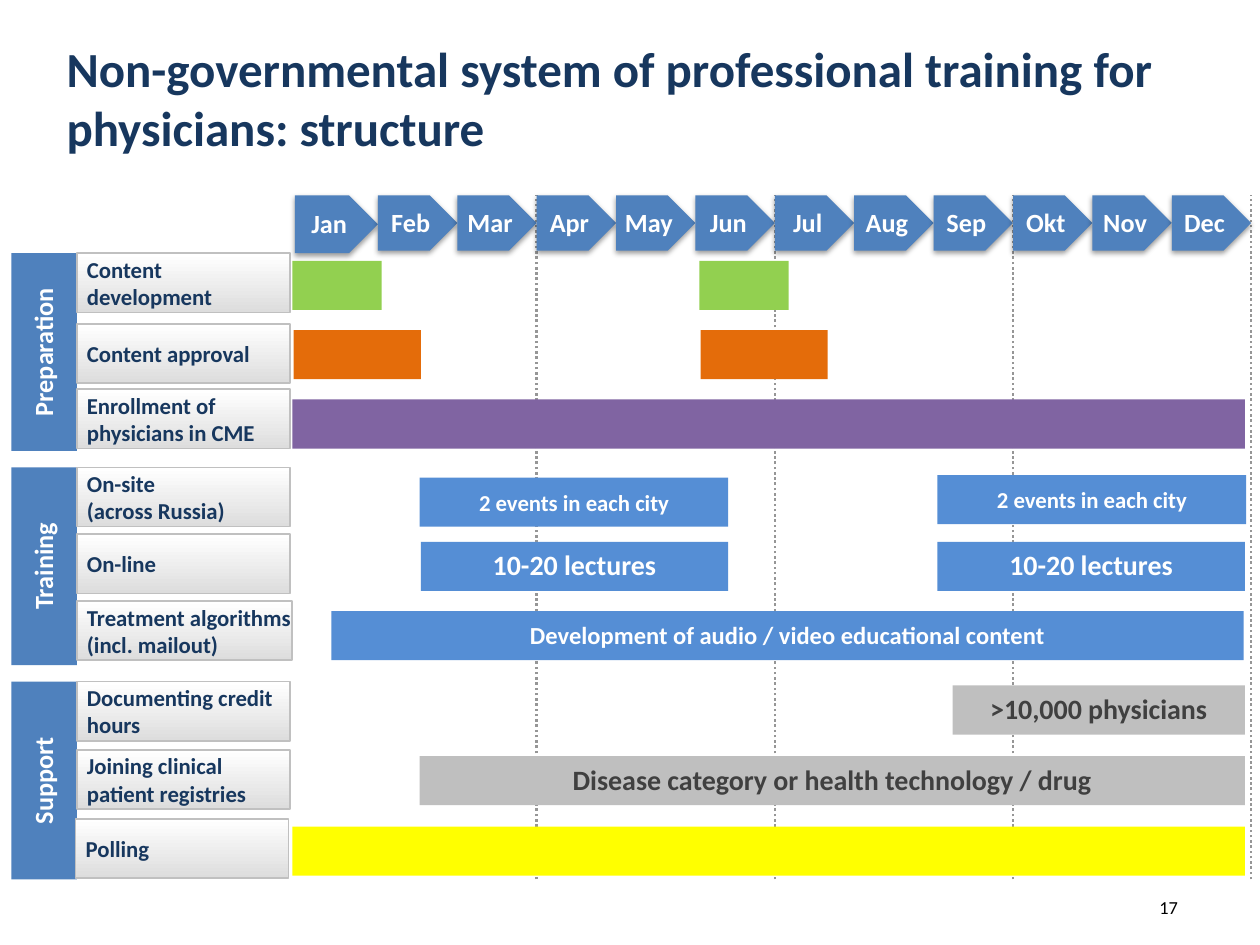
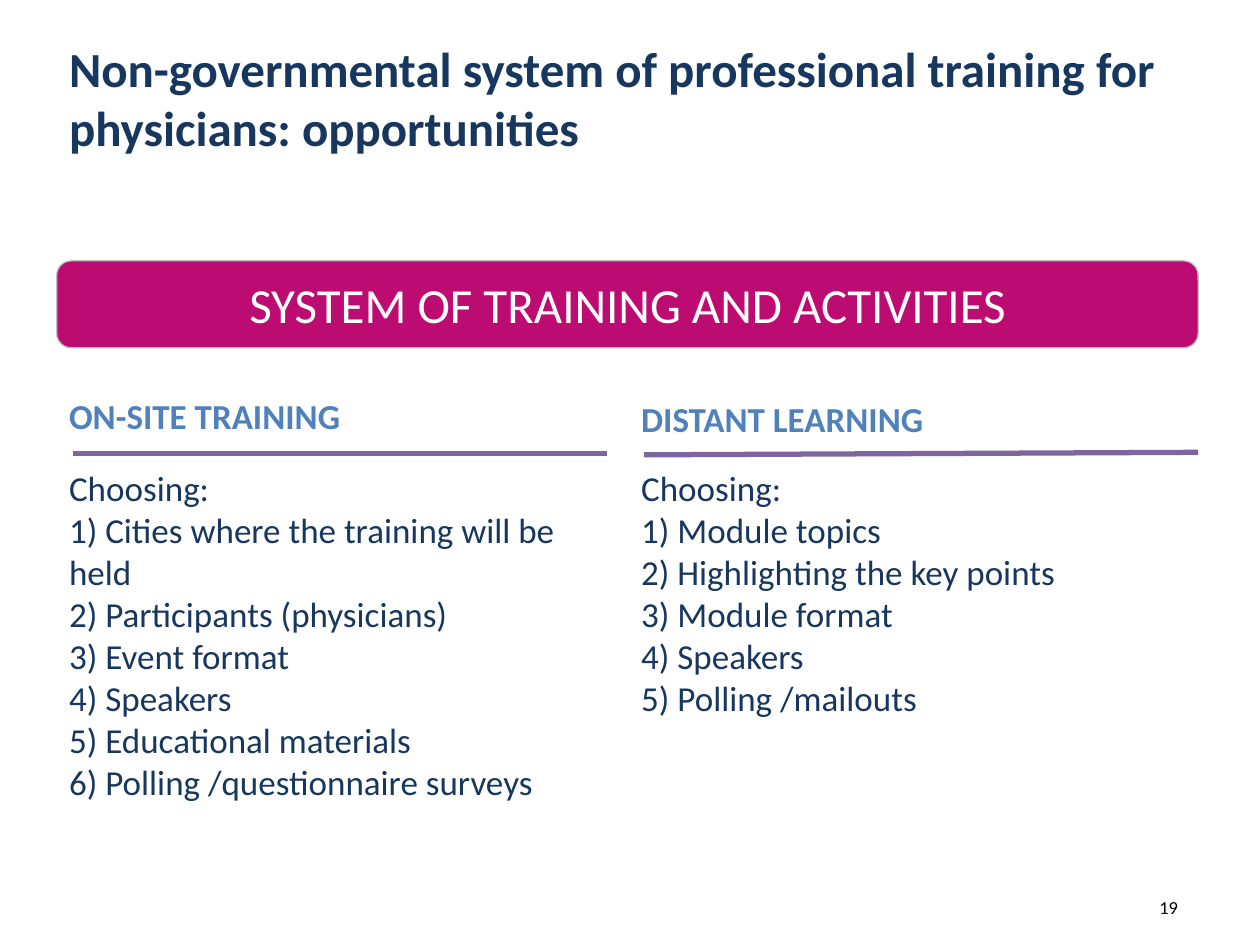
"""Build two slides on a professional training system for physicians."""
from lxml import etree
from pptx import Presentation
from pptx.dml.color import RGBColor
from pptx.enum.dml import MSO_LINE
from pptx.enum.shapes import MSO_CONNECTOR, MSO_SHAPE
from pptx.enum.text import MSO_ANCHOR, PP_ALIGN
from pptx.oxml.ns import qn
from pptx.util import Pt

PX = 9144
FONT = "Calibri"
NAVY, BLUE, SKY, PURPLE = "17375E", "4F81BD", "558ED5", "8064A2"
GREEN, ORANGE, YELLOW, MAGENTA = "92D050", "E46C0A", "FFFF00", "BC0C71"
WHITE, BLACK, PALE, SILVER = "FFFFFF", "000000", "DDDDDD", "C0C0C0"
GREY, CHARCOAL, DOTS = "BFBFBF", "404040", "969696"
RECT, ROUNDED, ARROW = MSO_SHAPE.RECTANGLE, MSO_SHAPE.ROUNDED_RECTANGLE, MSO_SHAPE.PENTAGON
STRAIGHT, DOTTED = MSO_CONNECTOR.STRAIGHT, MSO_LINE.ROUND_DOT
LEFT, CENTER = PP_ALIGN.LEFT, PP_ALIGN.CENTER
TOP, MIDDLE = MSO_ANCHOR.TOP, MSO_ANCHOR.MIDDLE


def add_text(s, at, text="", kind=None, fill=None, line=None, width=1, size=16,
             color=WHITE, bold=False, align=CENTER, anchor=MIDDLE,
             insets=(10, 5, 10, 5), spacing=None):
    at = [v * PX for v in at]
    if kind is None:
        sp = s.shapes.add_textbox(*at)
    else:
        sp = s.shapes.add_shape(kind, *at)
        sp.shadow.inherit = False
    if fill:
        sp.fill.solid()
        sp.fill.fore_color.rgb = RGBColor.from_string(fill)
    if line:
        sp.line.color.rgb = RGBColor.from_string(line)
        sp.line.width = Pt(width)
    else:
        sp.line.fill.background()
    tf = sp.text_frame
    tf.word_wrap = True
    tf.vertical_anchor = anchor
    tf.margin_left, tf.margin_top, tf.margin_right, tf.margin_bottom = [v * PX for v in insets]
    for i, words in enumerate(text.split("\n") if text else []):
        p = tf.add_paragraph() if i else tf.paragraphs[0]
        p.alignment = align
        if spacing:
            p.line_spacing = spacing
        r = p.add_run()
        r.text = words
        r.font.name, r.font.size, r.font.bold = FONT, Pt(size), bold
        r.font.color.rgb = RGBColor.from_string(color)
    return sp


def add_line(s, ends, color, width, dash=None):
    c = s.shapes.add_connector(STRAIGHT, *[v * PX for v in ends])
    c.line.color.rgb = RGBColor.from_string(color)
    c.line.width = Pt(width)
    if dash:
        c.line.dash_style = dash
    etree.SubElement(c.element.spPr, qn("a:effectLst"))


prs = Presentation()
prs.slide_width, prs.slide_height = 1000 * PX, 750 * PX
slides = []
for ending, number, left, width in [("structure", "17", 43, 908),
                                    ("opportunities", "19", 45, 906)]:
    s = prs.slides.add_slide(prs.slide_layouts[6])
    add_text(s, (left, 15, width, 125),
             f"Non-governmental system of professional training for physicians: {ending}",
             fill=WHITE, size=28, color=NAVY, bold=True, align=LEFT)
    add_text(s, (904, 706, 47, 31), number, size=10.5, color=BLACK, anchor=TOP)
    slides.append(s)
plan, options = slides

TIGHT = dict(kind=RECT, bold=True, insets=(0, 0, 0, 0))
BAR_H = 39
MONTH_W = 63
for quarter in range(1, 5):
    x = 237 + quarter * 3 * MONTH_W
    add_line(plan, (x, 698, x, 155), DOTS, 1.5, DOTTED)

stages = [
    ("Preparation", [(201, "Content development"), (257, "Content approval"),
                     (309, "Enrollment of physicians in CME")]),
    ("Training", [(371, "On-site\n(across Russia)"), (424, "On-line"),
                  (477, "Treatment algorithms\n(incl. mailout)")]),
    ("Support", [(541, "Documenting credit hours"),
                 (595, "Joining clinical patient registries"), (650, "Polling")]),
]
for i, (stage, tasks) in enumerate(stages):
    sp = add_text(plan, (9, 201 + 170 * i, 52, 157), stage, fill=BLUE, size=15,
                  spacing=0.95, **TIGHT)
    sp.element.txBody.bodyPr.set("vert", "vert270")
    for y, task in tasks:
        x = 60 if task == "Polling" else 61
        w = 171 if task.startswith("Treatment") else 169
        sp = add_text(plan, (x, y, w, 47), task, RECT, line=SILVER, size=13, color=NAVY,
                      bold=True, align=LEFT, insets=(8, 0, 0, 0))
        sp.fill.gradient()
        sp.fill.gradient_angle = 90
        for stop, shade in zip(sp.fill.gradient_stops, (PALE, WHITE)):
            stop.color.rgb = RGBColor.from_string(shade)

bars = [
    (232, 207, 71, GREEN, "", 16),
    (555, 207, 71, GREEN, "", 16),
    (233, 262, 101, ORANGE, "", 16),
    (556, 262, 101, ORANGE, "", 16),
    (232, 317, 756, PURPLE, "", 16),
    (333, 379, 245, SKY, "2 events in each city", 13),
    (744, 377, 245, SKY, "2 events in each city", 13),
    (334, 430, 244, SKY, "10-20 lectures", 16),
    (744, 430, 244, SKY, "10-20 lectures", 16),
    (263, 485, 724, SKY, "Development of audio / video educational content", 14),
    (756, 544, 232, GREY, ">10,000 physicians", 16),
    (333, 600, 655, GREY, "Disease category or health technology / drug", 16),
    (232, 656, 756, YELLOW, "", 16),
]
for x, y, w, fill, text, size in bars:
    add_text(plan, (x, y, w, BAR_H), text, fill=fill, size=size,
             color=CHARCOAL if fill == GREY else WHITE,
             spacing=None if size == 13 else 0.95, **TIGHT)

months = "Jan Feb Mar Apr May Jun Jul Aug Sep Okt Nov Dec".split()
for i, month in enumerate(months):
    at = (237 + MONTH_W * i, 155, MONTH_W, 44) if i else (234, 155, 66, 46)
    sp = add_text(plan, at, month, fill=BLUE, size=15, spacing=0.95,
                  **{**TIGHT, "kind": ARROW})
    shadow = etree.SubElement(sp.element.spPr.find(qn("a:effectLst")), qn("a:outerShdw"),
                              blurRad="39370", dist="20320", dir="5400000", rotWithShape="0")
    black = etree.SubElement(shadow, qn("a:srgbClr"), val=BLACK)
    etree.SubElement(black, qn("a:alpha"), val="38000")

add_text(options, (45, 207, 906, 69), "SYSTEM OF TRAINING AND ACTIVITIES", ROUNDED,
         fill=MAGENTA, line=GREY, width=0.75, size=28)
columns = [
    (45, 325, 437, 279, (58, 360, 482, 360), "ON-SITE TRAINING",
     ["Cities where the training will be held", "Participants (physicians)", "Event format",
      "Speakers", "Educational materials", "Polling /questionnaire surveys"]),
    (499, 327, 453, 212, (511, 361, 951, 359), "DISTANT LEARNING",
     ["Module topics", "Highlighting the key points", "Module format", "Speakers",
      "Polling /mailouts"]),
]
for x, y, w, h, rule, heading, choices in columns:
    lines = ["Choosing:"] + [f"{n}) {choice}" for n, choice in enumerate(choices, 1)]
    add_text(options, (x, 365, w, h), "\n".join(lines), size=20, color=NAVY,
             align=LEFT, anchor=TOP)
    add_text(options, (x, y, 453, 30), heading, size=20, color=BLUE, bold=True,
             align=LEFT, anchor=TOP, spacing=Pt(12))
    add_line(options, rule, PURPLE, 3)

prs.save("out.pptx")
